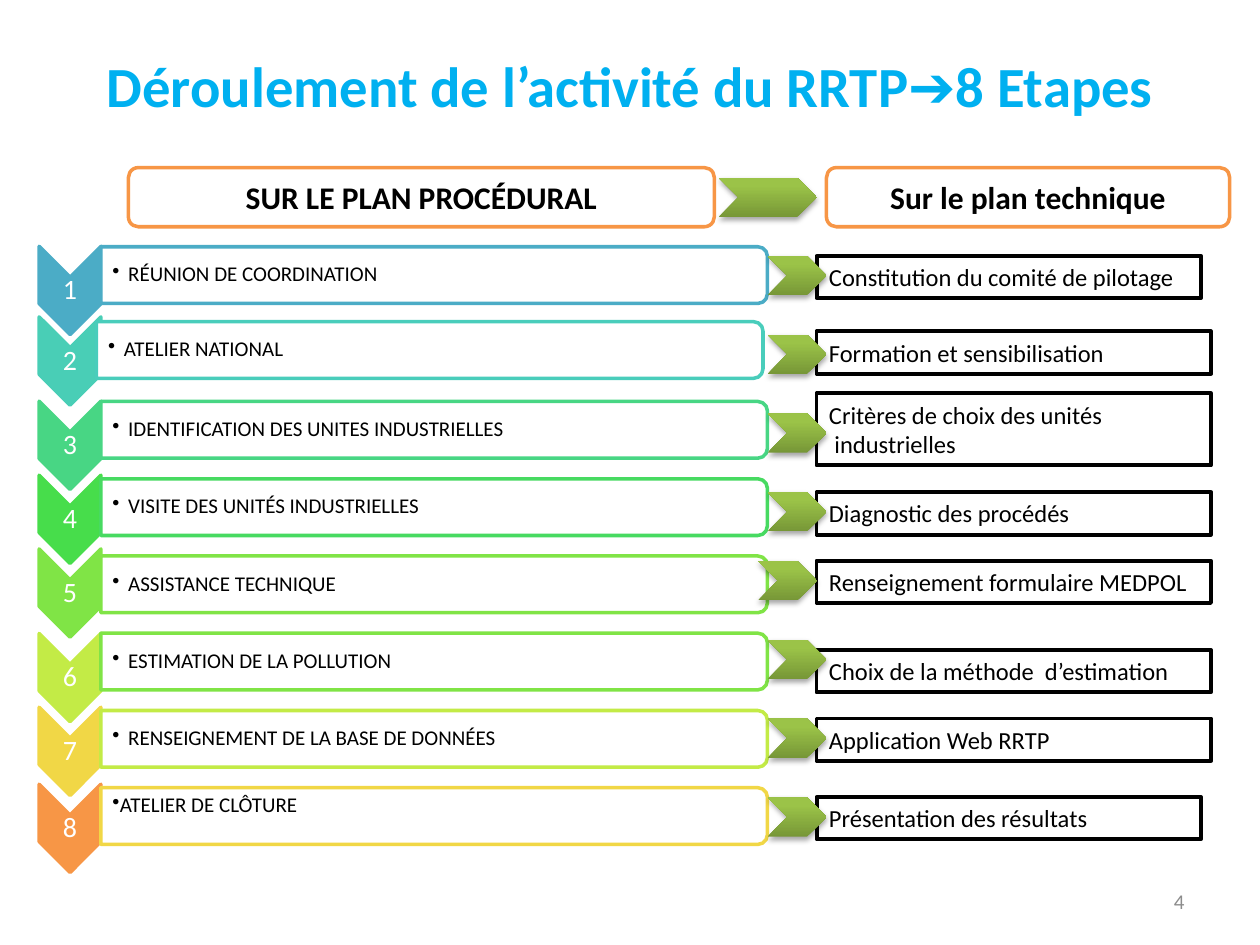
from dataclasses import dataclass

from lxml.etree import SubElement
from pptx import Presentation
from pptx.dml.color import RGBColor
from pptx.enum.shapes import MSO_SHAPE
from pptx.enum.text import MSO_ANCHOR, PP_ALIGN
from pptx.oxml.ns import qn
from pptx.util import Pt


@dataclass(frozen=True)
class Theme:
    font: str = "Calibri"
    title: str = "00B0F0"
    text: str = "000000"
    white: str = "FFFFFF"
    grey: str = "8C8C8C"
    accent: str = "F79646"
    arrow_dark: str = "779737"
    arrow_light: str = "9BC348"
    title_size: float = 32.4
    header_size: float = 18
    number_size: float = 16
    result_size: float = 14
    small_size: float = 12


T = Theme()


def write(s, text, size, color=T.text, bold=False, align=PP_ALIGN.LEFT,
          anchor=MSO_ANCHOR.MIDDLE, spacing=None, bullet=False, hanging=0, insets=None):
    """Fill s with text, one paragraph per line."""
    tf = s.text_frame
    tf.word_wrap = True
    tf.vertical_anchor = anchor
    if insets:
        tf.margin_left, tf.margin_top, tf.margin_right, tf.margin_bottom = map(Pt, insets)
    for i, line in enumerate(text.split("\n")):
        p = tf.add_paragraph() if i else tf.paragraphs[0]
        p.alignment = align
        if spacing:
            p.line_spacing = spacing
        if bullet:
            pPr = p._p.get_or_add_pPr()
            pPr.set("marL", str(Pt(hanging)))
            pPr.set("indent", str(-Pt(hanging)))
            SubElement(pPr, qn("a:buChar"), char="•")
        r = p.add_run()
        r.text = line
        r.font.name, r.font.size, r.font.bold = T.font, Pt(size), bold
        r.font.color.rgb = RGBColor.from_string(color)


def add_box(kind, x, y, w, h, fill=None, line=None, width=2, rotation=0):
    s = sl.shapes.add_shape(kind, Pt(x), Pt(y), Pt(w), Pt(h))
    s.shadow.inherit = False
    s.rotation = rotation
    if fill:
        s.fill.solid()
        s.fill.fore_color.rgb = RGBColor.from_string(fill)
    else:
        s.fill.background()
    if line:
        s.line.color.rgb = RGBColor.from_string(line)
        s.line.width = Pt(width)
    else:
        s.line.fill.background()
    return s


prs = Presentation()
prs.slide_width, prs.slide_height = Pt(720), Pt(540)
sl = prs.slides.add_slide(prs.slide_layouts[5])

title = sl.shapes.title
title.left, title.top, title.width, title.height = Pt(36), Pt(3.6), Pt(648), Pt(90)
write(title, "Déroulement de l’activité du RRTP➔8 Etapes", T.title_size,
      color=T.title, bold=True, align=PP_ALIGN.CENTER)

for x, w, text in [(73.4, 334.8, "SUR LE PLAN PROCÉDURAL"),
                   (472.3, 230.4, "Sur le plan technique")]:
    s = add_box(MSO_SHAPE.ROUNDED_RECTANGLE, x, 95.8, w, 33.8, T.white, T.accent)
    write(s, text, T.header_size, bold=True, align=PP_ALIGN.CENTER)

# step colour, bar colour, chevron centre, bar left, bar centre, step name
steps = [
    ("4BACC6", "4BACC6", 166, 57.6, 157.2, "RÉUNION DE COORDINATION"),
    ("49CEB6", "49CDBB", 206.3, 55.1, 200, "ATELIER NATIONAL"),
    ("48D684", "48D684", 254.5, 57.6, 245.6, "IDENTIFICATION DES UNITES INDUSTRIELLES"),
    ("47DD4B", "47DA61", 296.8, 57.6, 289.8, "VISITE DES UNITÉS INDUSTRIELLES"),
    ("80E446", "80E446", 338.9, 57.6, 333.9, "ASSISTANCE TECHNIQUE"),
    ("C3EB46", "80E446", 387.2, 57.6, 378, "ESTIMATION DE LA POLLUTION"),
    ("F1D746", "C3EB46", 429.4, 57.6, 422.2, "RENSEIGNEMENT DE LA BASE DE DONNÉES"),
    ("F79646", "F1D746", 473.4, 57.6, 466.3, "ATELIER DE CLÔTURE"),
]
chev_l, chev_w, bar_l, bar_w = 50.4, 35.3, 380.9, 32.4  # before the quarter turn
chev_x = 40  # centre of the chevron column

for n, (color, bar_color, chev_y, bar_x, bar_y, name) in enumerate(steps, 1):
    last = n == len(steps)
    add_box(MSO_SHAPE.CHEVRON, chev_x - chev_l / 2, chev_y - chev_w / 2,
            chev_l, chev_w, color, color, rotation=90)
    number = sl.shapes.add_textbox(Pt(chev_x - chev_w / 2), Pt(chev_y - 7.5),
                                   Pt(chev_w), Pt(15))
    write(number, str(n), T.number_size, color=T.white, align=PP_ALIGN.CENTER,
          spacing=0.9, insets=(0.8, 0.8, 0.8, 0.8))
    add_box(MSO_SHAPE.ROUND_2_SAME_RECTANGLE, bar_x + (bar_l - bar_w) / 2,
            bar_y - bar_l / 2, bar_w, bar_l, T.white, bar_color, rotation=90)
    label = sl.shapes.add_textbox(Pt(bar_x), Pt(bar_y - 14.7), Pt(379.4), Pt(29.4))
    write(label, name, T.small_size, bullet=True, insets=(6.7, 0.8, 0.8, 0.8),
          hanging=0 if last else 9, spacing=None if last else 0.9,
          anchor=MSO_ANCHOR.TOP if last else MSO_ANCHOR.MIDDLE)

# top, width, height, text
results = [
    (146.2, 219.6, 24.2, "Constitution du comité de pilotage"),
    (189.4, 225.4, 24.2, "Formation et sensibilisation"),
    (224.8, 225.4, 41.2, "Critères de choix des unités\n industrielles"),
    (281.3, 225.4, 24.2, "Diagnostic des procédés"),
    (320.4, 225.4, 24.2, "Renseignement formulaire MEDPOL"),
    (371.4, 225.4, 24.2, "Choix de la méthode  d’estimation"),
    (410.6, 225.4, 24.2, "Application Web RRTP"),
    (455.4, 219.6, 24.2, "Présentation des résultats"),
]
for y, w, h, text in results:
    s = add_box(MSO_SHAPE.RECTANGLE, 466.6, y, w, h, line=T.text, width=2.25)
    write(s, text, T.result_size, anchor=MSO_ANCHOR.TOP)

arrows = [(410.6, 101.5, 56.2)]
arrows += [(438.6, 146.2 + 45 * i, 33.8) for i in range(4)]
arrows += [(433.2 if i == 0 else 438.6, 320.6 + 45 * i, 33.8) for i in range(4)]
for x, y, w in arrows:
    s = add_box(MSO_SHAPE.CHEVRON, x, y, w, 22.5)
    s.fill.gradient()
    s.fill.gradient_angle = 90
    for stop, color, position in zip(s.fill.gradient_stops,
                                     (T.arrow_dark, T.arrow_light), (0, 0.8)):
        stop.color.rgb = RGBColor.from_string(color)
        stop.position = position
    effects = s._element.spPr.find(qn("a:effectLst"))
    shadow = SubElement(effects, qn("a:outerShdw"), blurRad=str(Pt(3.1)),
                        dist=str(Pt(1.8)), dir="5400000", rotWithShape="0")
    shade = SubElement(shadow, qn("a:srgbClr"), val=T.text)
    SubElement(shade, qn("a:alpha"), val="35000")

page = sl.shapes.add_textbox(Pt(516), Pt(500.4), Pt(168), Pt(28.8))
write(page, "4", T.small_size, color=T.grey, align=PP_ALIGN.RIGHT)

prs.save("out.pptx")
